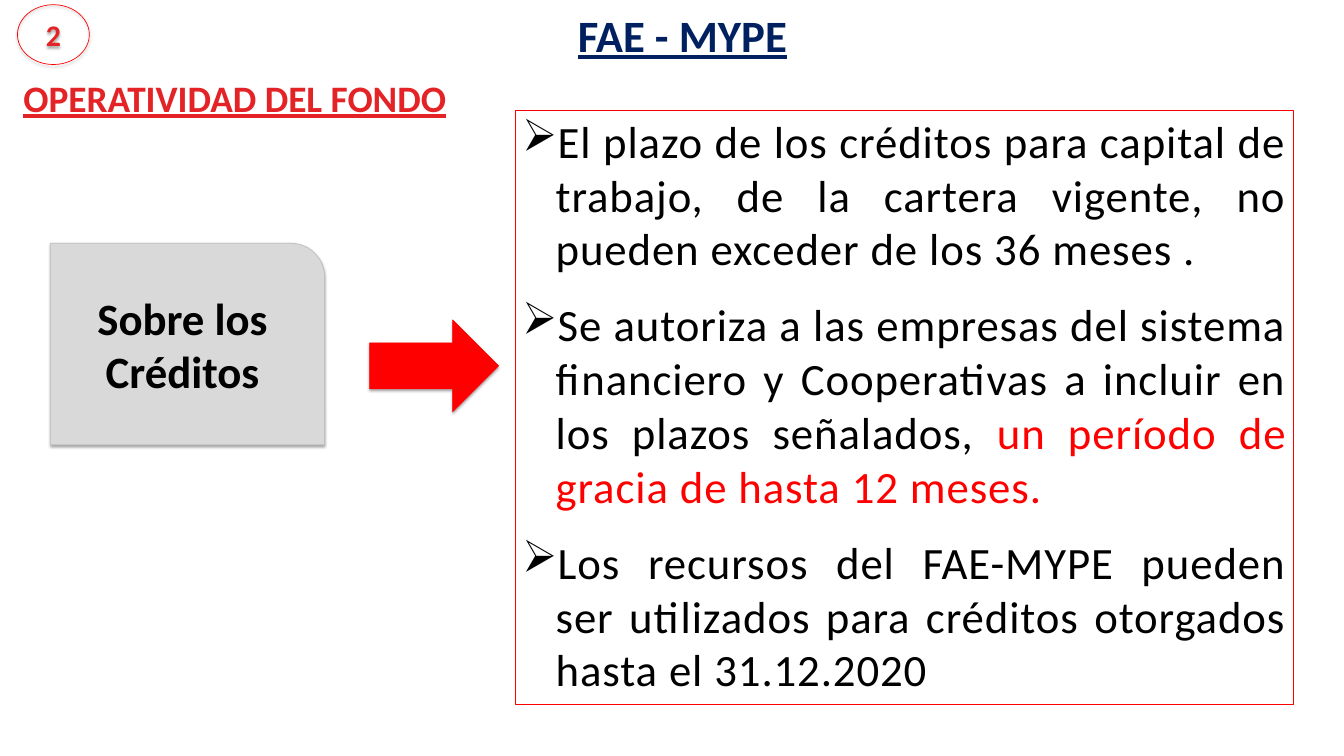
from lxml import etree
from pptx import Presentation
from pptx.dml.color import RGBColor
from pptx.enum import shapes, text
from pptx.oxml.ns import qn
from pptx.util import Inches, Pt

# Content
TITLE = "FAE - MYPE"
SUBTITLE = "OPERATIVIDAD DEL FONDO"
NUMBER = "2"
TOPIC = "Sobre los Créditos"
# Each point is a list of (text, colour name)
POINTS = [
    [("El plazo de los créditos para capital de trabajo, de la cartera vigente, "
      "no pueden exceder de los 36 meses .", "black")],
    [("Se autoriza a las empresas del sistema financiero y Cooperativas a "
      "incluir en los plazos señalados, ", "black"),
     ("un período de gracia de hasta 12 meses.", "red")],
    [("Los recursos del FAE-MYPE pueden ser utilizados para créditos otorgados "
      "hasta el 31.12.2020", "black")],
]

THEME = {
    "font": "Calibri",
    "colors": {"navy": "002060", "crimson": "E32326", "red": "FF0000",
               "black": "000000", "gray": "D9D9D9", "border": "BFBFBF"},
    "sizes": {"large": 48, "subtitle": 40, "number": 32},
}
ALIGN = text.PP_ALIGN
SHAPE = shapes.MSO_SHAPE


def color(name):
    return RGBColor.from_string(THEME["colors"][name])


def place(shape, left, top, width, height):
    shape.left, shape.top = Inches(left), Inches(top)
    shape.width, shape.height = Inches(width), Inches(height)


def write(shape, paragraphs, size="large", bold=False, underline=False,
          align=ALIGN.LEFT, anchor=text.MSO_ANCHOR.TOP, bullet=None,
          gap=0, spacing=0):
    """Fill a shape with paragraphs, each a list of (text, colour name)."""
    frame = shape.text_frame
    frame.word_wrap = True
    frame.auto_size = text.MSO_AUTO_SIZE.NONE
    frame.vertical_anchor = anchor
    for index, parts in enumerate(paragraphs):
        paragraph = frame.add_paragraph() if index else frame.paragraphs[0]
        if bullet:
            properties = paragraph._p.get_or_add_pPr()
            properties.set("marL", str(Inches(0.5)))
            properties.set("indent", str(-Inches(0.5)))
            etree.SubElement(properties, qn("a:buChar")).set("char", bullet)
        paragraph.alignment = align
        paragraph.space_before = Pt(gap if index else 0)
        paragraph.space_after = Pt(gap)
        for words, color_name in parts:
            run = paragraph.add_run()
            run.text = words
            run.font.name = THEME["font"]
            run.font.size = Pt(THEME["sizes"][size])
            run.font.bold = bold
            run.font.underline = underline
            run.font.color.rgb = color(color_name)
            if spacing:
                run._r.get_or_add_rPr().set("spc", str(spacing * 100))


def add_shape(slide, kind, box, line, fill=None, line_width=0.75, shadow=True):
    shape = slide.shapes.add_shape(kind, *map(Inches, box))
    if fill:
        shape.fill.solid()
        shape.fill.fore_color.rgb = color(fill)
    else:
        shape.fill.background()
    shape.line.color.rgb = color(line)
    shape.line.width = Pt(line_width)
    shape.shadow.inherit = False
    if shadow:
        effects = shape._element.spPr.find(qn("a:effectLst"))
        outer = etree.SubElement(effects, qn("a:outerShdw"), blurRad=str(Pt(3.1)),
                                 dist=str(Pt(1.8)), dir="5400000", rotWithShape="0")
        tint = etree.SubElement(outer, qn("a:srgbClr"), val=THEME["colors"]["black"])
        etree.SubElement(tint, qn("a:alpha"), val="35000")
    return shape


def main():
    presentation = Presentation()
    presentation.slide_width = Inches(20)
    presentation.slide_height = Inches(11.25)
    slide = presentation.slides.add_slide(presentation.slide_layouts[5])

    # Headings
    title = slide.shapes.title
    place(title, 8.5, 0.06, 6.17, 0.91)
    write(title, [[(TITLE, "navy")]], bold=True, underline=True)
    subtitle = slide.shapes.add_textbox(*map(Inches, (0.25, 1.07, 8.75, 0.77)))
    write(subtitle, [[(SUBTITLE, "crimson")]], size="subtitle",
          bold=True, underline=True)

    # Topic card
    card = add_shape(slide, SHAPE.ROUND_1_RECTANGLE, (0.75, 3.62, 4.08, 3),
                     line="border", fill="gray")
    write(card, [[(TOPIC, "black")]], bold=True, align=ALIGN.CENTER,
          anchor=text.MSO_ANCHOR.MIDDLE)

    # Framed points
    panel = add_shape(slide, SHAPE.RECTANGLE, (7.67, 1.64, 11.58, 8.85),
                      line="red", line_width=1, shadow=False)
    write(panel, POINTS, align=ALIGN.JUSTIFY, bullet="➢", gap=12, spacing=1)

    # Arrow from topic to points
    add_shape(slide, SHAPE.RIGHT_ARROW, (5.5, 4.76, 1.92, 1.37),
              line="red", fill="red")

    # Section number
    badge = add_shape(slide, SHAPE.OVAL, (0.26, 0.07, 1.07, 0.89), line="red")
    write(badge, [[(NUMBER, "crimson")]], size="number", bold=True,
          align=ALIGN.CENTER, anchor=text.MSO_ANCHOR.MIDDLE)

    presentation.save("out.pptx")


if __name__ == "__main__":
    main()
